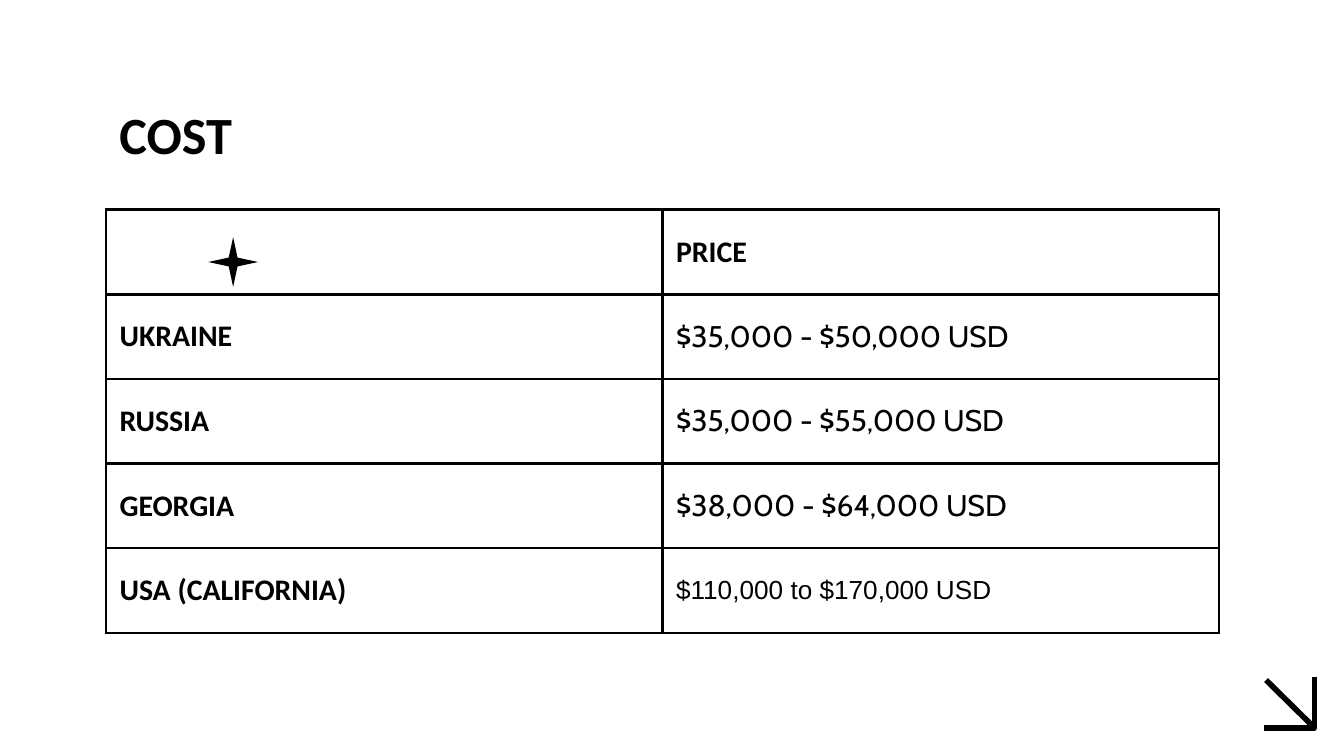
from lxml import etree
from pptx import Presentation
from pptx.dml.color import RGBColor
from pptx.enum.shapes import MSO_CONNECTOR, MSO_SHAPE
from pptx.enum.text import MSO_ANCHOR
from pptx.oxml.ns import qn
from pptx.util import Pt

STRAIGHT = MSO_CONNECTOR.STRAIGHT
STAR = MSO_SHAPE.STAR_4_POINT
MIDDLE = MSO_ANCHOR.MIDDLE
PX = 4572  # 200 px to the inch

THEME = {
    "ink": RGBColor(0, 0, 0),
    "paper": RGBColor(255, 255, 255),
    "heading_font": "Calibri",
    "price_font": "Cabin",
    "plain_font": "Arial",
    "title_size": 28,
    "cell_size": 16,
    "plain_size": 14,
    "border": 1.5,
    "arrow": 3,
}


def write(frame, text, font=THEME["heading_font"], size=THEME["cell_size"], bold=True):
    run = frame.paragraphs[0].add_run()
    run.text = text
    run.font.name = font
    run.font.size = Pt(size)
    run.font.bold = bold
    run.font.color.rgb = THEME["ink"]


def add_borders(cell):
    properties = cell._tc.get_or_add_tcPr()
    for index, side in enumerate(("lnL", "lnR", "lnT", "lnB")):
        border = etree.Element(qn(f"a:{side}"), w=str(Pt(THEME["border"])))
        fill = etree.SubElement(border, qn("a:solidFill"))
        etree.SubElement(fill, qn("a:srgbClr"), val=str(THEME["ink"]))
        properties.insert(index, border)


presentation = Presentation()
presentation.slide_width = 2000 * PX
presentation.slide_height = 1125 * PX
slide = presentation.slides.add_slide(presentation.slide_layouts[6])
slide.background.fill.solid()
slide.background.fill.fore_color.rgb = THEME["paper"]
shapes = slide.shapes

# Corner arrow
builder = shapes.build_freeform(1956, 1007, scale=PX)
builder.add_line_segments([(1956, 1083), (1881, 1083)], close=False)
arrow_head = builder.convert_to_shape()
arrow_head.fill.background()
arrow_head.shadow.inherit = False
arrow_shaft = shapes.add_connector(STRAIGHT, 1956 * PX, 1083 * PX, 1884 * PX, 1012 * PX)
etree.SubElement(arrow_shaft._element.spPr, qn("a:effectLst"))
for shape in (arrow_head, arrow_shaft):
    shape.line.color.rgb = THEME["ink"]
    shape.line.width = Pt(THEME["arrow"])

# Title
title = shapes.add_textbox(158 * PX, 152 * PX, 1686 * PX, 94 * PX).text_frame
title.word_wrap = True
title.margin_left = title.margin_right = 20 * PX
title.margin_top = title.margin_bottom = 0
write(title, "COST", size=THEME["title_size"])

# Price table
price_format = {"font": THEME["price_font"], "bold": False}
plain_format = {"font": THEME["plain_font"], "size": THEME["plain_size"], "bold": False}
rows = [
    ("", "PRICE", {}),
    ("UKRAINE", "$35,000 - $50,000 USD", price_format),
    ("RUSSIA", "$35,000 - $55,000 USD", price_format),
    ("GEORGIA", "$38,000 - $64,000 USD", price_format),
    ("USA (CALIFORNIA)", "$110,000 to $170,000 USD", plain_format),
]
table = shapes.add_table(len(rows), 2, 158 * PX, 312 * PX, 1656 * PX, 630 * PX).table
table.first_row = table.horz_banding = False
for row_index, (country, price, value_format) in enumerate(rows):
    for column_index, (text, text_format) in enumerate([(country, {}), (price, value_format)]):
        cell = table.cell(row_index, column_index)
        cell.fill.background()
        cell.vertical_anchor = MIDDLE
        cell.margin_left = cell.margin_right = 20 * PX
        cell.margin_top = cell.margin_bottom = 20 * PX
        add_borders(cell)
        if text:
            write(cell.text_frame, text, **text_format)

# Star in the empty header cell
star = shapes.add_shape(STAR, 310 * PX, 353 * PX, 74 * PX, 74 * PX)
star.adjustments[0] = 0.125
star.fill.solid()
star.fill.fore_color.rgb = THEME["ink"]
star.line.fill.background()
star.shadow.inherit = False

presentation.save("out.pptx")
